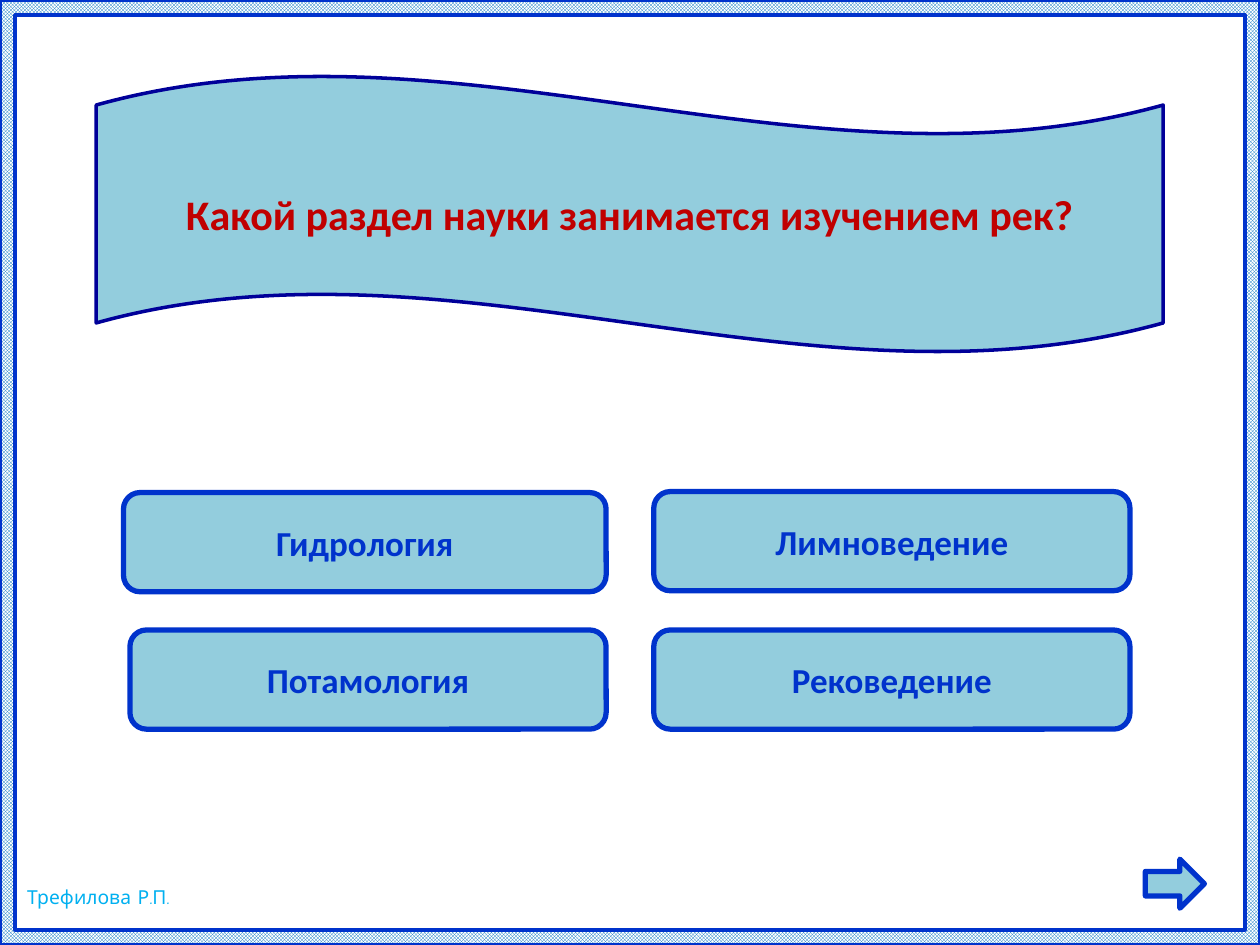
from pptx import Presentation
from pptx.dml.color import RGBColor
from pptx.enum.dml import MSO_PATTERN
from pptx.enum.shapes import MSO_SHAPE
from pptx.enum.text import MSO_ANCHOR, MSO_AUTO_SIZE, PP_ALIGN
from pptx.util import Cm, Pt

BLUE = RGBColor(0x00, 0x33, 0xCC)
NAVY = RGBColor(0x00, 0x00, 0x99)
AQUA = RGBColor(0x93, 0xCD, 0xDD)
RED = RGBColor(0xC0, 0x00, 0x00)
SKY = RGBColor(0x00, 0xB0, 0xF0)
CHECK = RGBColor(0x00, 0x70, 0xC0)
WHITE = RGBColor(0xFF, 0xFF, 0xFF)

QUESTION = "Какой раздел науки занимается изучением рек?"
AUTHOR = "Трефилова Р.П."
BUTTON_HEIGHT = 2
# text, left, top, width in cm
ANSWERS = [
    ("Лимноведение", 13.18, 9.91, 9.6),
    ("Рековедение", 13.18, 12.7, 9.6),
    ("Гидрология", 2.49, 9.93, 9.73),
    ("Потамология", 2.62, 12.7, 9.6),
]


def add_outlined(kind, left, top, width, height, line_color, line_width):
    s = slide.shapes.add_shape(kind, Cm(left), Cm(top), Cm(width), Cm(height))
    s.shadow.inherit = False
    s.fill.solid()
    s.fill.fore_color.rgb = AQUA
    s.line.color.rgb = line_color
    s.line.width = Pt(line_width)
    return s


def set_label(s, text, size, color, font="Calibri", bold=True):
    tf = s.text_frame
    tf.text = text
    f = tf.paragraphs[0].runs[0].font
    f.name, f.size, f.bold = font, Pt(size), bold
    f.color.rgb = color
    return tf


def center(tf):
    tf.vertical_anchor = MSO_ANCHOR.MIDDLE
    tf.paragraphs[0].alignment = PP_ALIGN.CENTER


prs = Presentation()
prs.slide_width, prs.slide_height = Cm(25.4), Cm(19.05)
slide = prs.slides.add_slide(prs.slide_layouts[6])
slide.background.fill.solid()
slide.background.fill.fore_color.rgb = WHITE

border = add_outlined(MSO_SHAPE.FRAME, 0, 0, 25.4, 19.05, BLUE, 2)
border.adjustments[0] = 0.016
border.fill.patterned()
border.fill.pattern = MSO_PATTERN.SMALL_CHECKER_BOARD
border.fill.fore_color.rgb = CHECK
border.fill.back_color.rgb = WHITE

signature = slide.shapes.add_textbox(Cm(0.3), Cm(17.73), Cm(3.61), Cm(0.73))
tf = set_label(signature, AUTHOR, 11, SKY, "Comic Neue", False)
tf.word_wrap = False
tf.auto_size = MSO_AUTO_SIZE.SHAPE_TO_FIT_TEXT

banner = add_outlined(MSO_SHAPE.WAVE, 1.94, 1.52, 21.51, 5.59, NAVY, 2)
banner.adjustments[0] = 0.107
banner.adjustments[1] = 0
center(set_label(banner, QUESTION, 24, RED))

for text, left, top, width in ANSWERS:
    button = add_outlined(MSO_SHAPE.ROUNDED_RECTANGLE, left, top, width,
                          BUTTON_HEIGHT, BLUE, 3)
    center(set_label(button, text, 20, BLUE))

add_outlined(MSO_SHAPE.RIGHT_ARROW, 23.09, 17.32, 1.19, 0.99, BLUE, 3)

prs.save("out.pptx")
